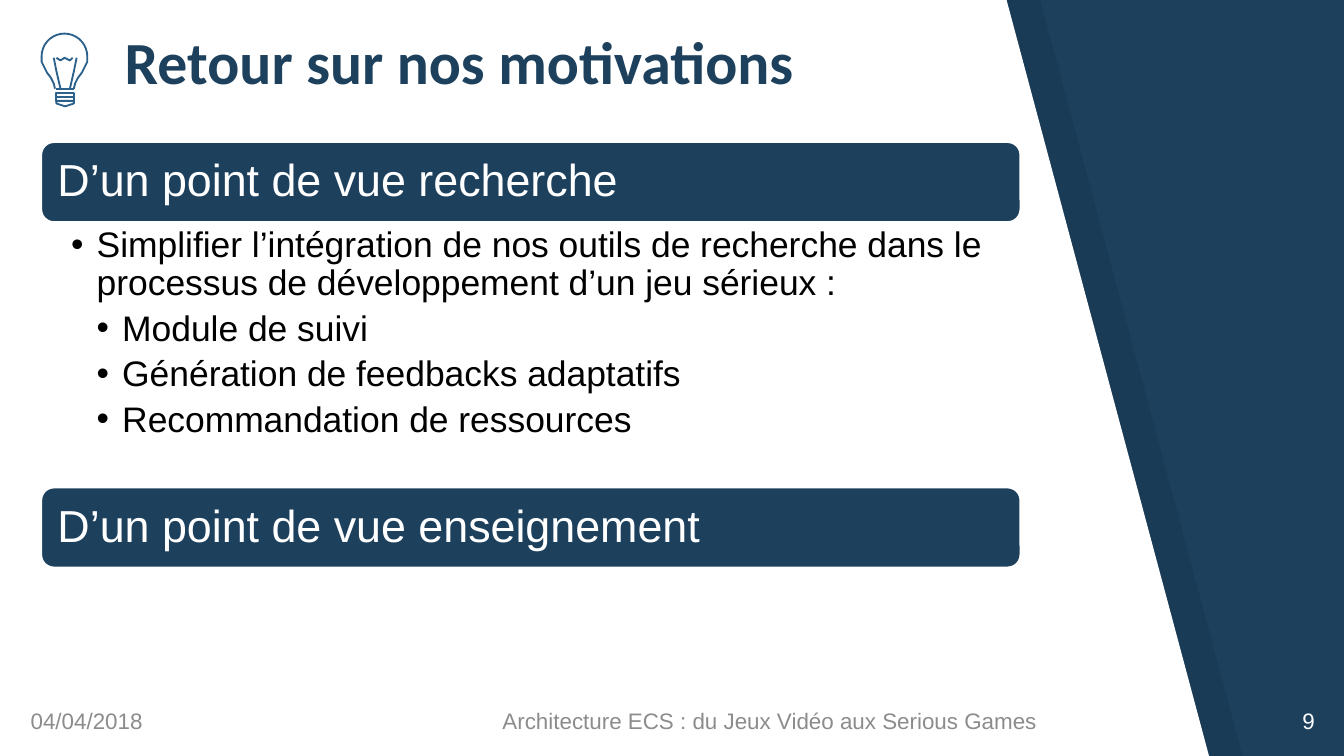
from math import cos, sin, radians
from pptx import Presentation
from pptx.util import Inches, Pt
from pptx.dml.color import RGBColor
from pptx.enum.shapes import MSO_SHAPE as Shape, MSO_CONNECTOR as Line
from pptx.enum.text import PP_ALIGN as Align, MSO_ANCHOR as Anchor
from pptx.oxml.ns import qn
from lxml.etree import SubElement

NAVY, BLUE, GREY, WHITE = "1D405D", "2B618B", "8C8C8C", "FFFFFF"
color = RGBColor.from_string


def write(shape, text, size, tint, font="Arial", anchor=Anchor.MIDDLE, pad=(0.1, 0.05, 0.1, 0.05)):
    frame = shape.text_frame
    frame.text = text
    frame.word_wrap = True
    frame.vertical_anchor = anchor
    frame.margin_left, frame.margin_top, frame.margin_right, frame.margin_bottom = map(Inches, pad)
    for para in frame.paragraphs:
        para.alignment = Align.LEFT
        for run in para.runs:
            run.font.size = Pt(size)
            run.font.name = font
            run.font.color.rgb = color(tint)
    return frame.paragraphs


def trace(points, close, fill=None):
    spots = [(Inches(x), Inches(y)) for x, y in points]
    pen = shapes.build_freeform(*spots[0])
    pen.add_line_segments(spots[1:], close=close)
    shape = pen.convert_to_shape()
    shape.shadow.inherit = False
    if fill:
        shape.fill.solid()
        shape.fill.fore_color.rgb = color(fill)
        shape.line.fill.background()
    else:
        shape.fill.background()
        shape.line.color.rgb = color(BLUE)
        shape.line.width = Pt(1)
    return shape


deck = Presentation()
deck.slide_width = Inches(10)
deck.slide_height = deck.slide_width * 9 // 16
slide = deck.slides.add_slide(deck.slide_layouts[6])
slide.background.fill.solid()
slide.background.fill.fore_color.rgb = color(NAVY)
shapes = slide.shapes

for left, fill in [(0.25, "000000"), (0, WHITE)]:
    panel = trace([(left, -0.01), (left, 5.64), (left + 9, 5.64), (left + 7.49, 0)], True, fill)
    if left:
        tone = panel.fill._xPr.find(qn("a:solidFill"))[0]
        SubElement(tone, qn("a:alpha"), val="7000")

title = shapes.add_textbox(Inches(0.83), Inches(0.29), Inches(6.14), Inches(0.53))
head = write(title, "Retour sur nos motivations", 32, NAVY, "Calibri", Anchor.BOTTOM, (0.1,) * 4)
head[0].runs[0].font.bold = True

for left, width, text, tint, align in [
    (0.13, 2.66, "04/04/2018", GREY, Align.LEFT),
    (3.64, 5.07, "Architecture ECS : du Jeux Vidéo aux Serious Games", GREY, Align.LEFT),
    (9.29, 0.59, "9", WHITE, Align.RIGHT),
]:
    box = shapes.add_textbox(Inches(left), Inches(5.21), Inches(width), Inches(0.3))
    write(box, text, 12, tint)[0].alignment = align

for top, text in [(1.05, "D’un point de vue recherche"), (3.62, "D’un point de vue enseignement")]:
    bar = shapes.add_shape(Shape.ROUNDED_RECTANGLE, Inches(0.3), Inches(top), Inches(7.3), Inches(0.61))
    bar.shadow.inherit = False
    bar.fill.solid()
    bar.fill.fore_color.rgb = color(NAVY)
    bar.line.color.rgb = color(WHITE)
    bar.line.width = Pt(2)
    write(bar, text, 24, WHITE, pad=(0.1,) * 4)[0].line_spacing = 0.9

points = [
    "Simplifier l’intégration de nos outils de recherche dans le processus de développement d’un jeu sérieux :",
    "Module de suivi",
    "Génération de feedbacks adaptatifs",
    "Recommandation de ressources",
]
box = shapes.add_textbox(Inches(0.3), Inches(1.66), Inches(7.3), Inches(1.96))
paras = write(box, "\n".join(points), 19, "000000", anchor=Anchor.TOP, pad=(0.23, 0.03, 0.19, 0.03))
for rank, para in enumerate(paras):
    para.level = 1 if rank == 0 else 2
    para.line_spacing = 0.9
    para.space_after = Pt(3.8)
    props = para._p.get_or_add_pPr()
    props.set("marL", str(Inches(0.19 * para.level)))
    props.set("indent", str(Inches(-0.19)))
    SubElement(props, qn("a:buFont"), typeface="Arial")
    SubElement(props, qn("a:buChar"), char="•")

mid = 0.48
side = [(0.55, 0.66), (0.56, 0.62), (0.58, 0.58), (0.61, 0.54), (0.63, 0.5), (0.65, 0.46)]
dome = [(mid + 0.17 * cos(radians(a)), 0.42 - 0.17 * sin(radians(a))) for a in range(0, 181, 10)]
flip = [(2 * mid - x, y) for x, y in reversed(side)]
trace(side + dome + flip, False)
trace([(0.45, 0.66), (0.42, 0.53), (0.4, 0.43)], False)
trace([(0.52, 0.66), (0.55, 0.53), (0.57, 0.43)], False)
trace([(0.42, 0.43), (0.45, 0.45), (0.48, 0.43), (0.52, 0.45), (0.54, 0.43)], False)
for top in (0.69, 0.72):
    trace([(0.42, top), (0.55, top), (0.55, top + 0.03), (0.42, top + 0.03)], True)
trace([(0.42, 0.75), (0.42, 0.77), (0.48, 0.79), (0.49, 0.79), (0.55, 0.77), (0.55, 0.75)], True)
neck = shapes.add_connector(Line.STRAIGHT, Inches(0.42), Inches(0.66), Inches(0.55), Inches(0.66))
neck.line.color.rgb = color(BLUE)
neck.line.width = Pt(1)
SubElement(neck._element.spPr, qn("a:effectLst"))

deck.save("out.pptx")
